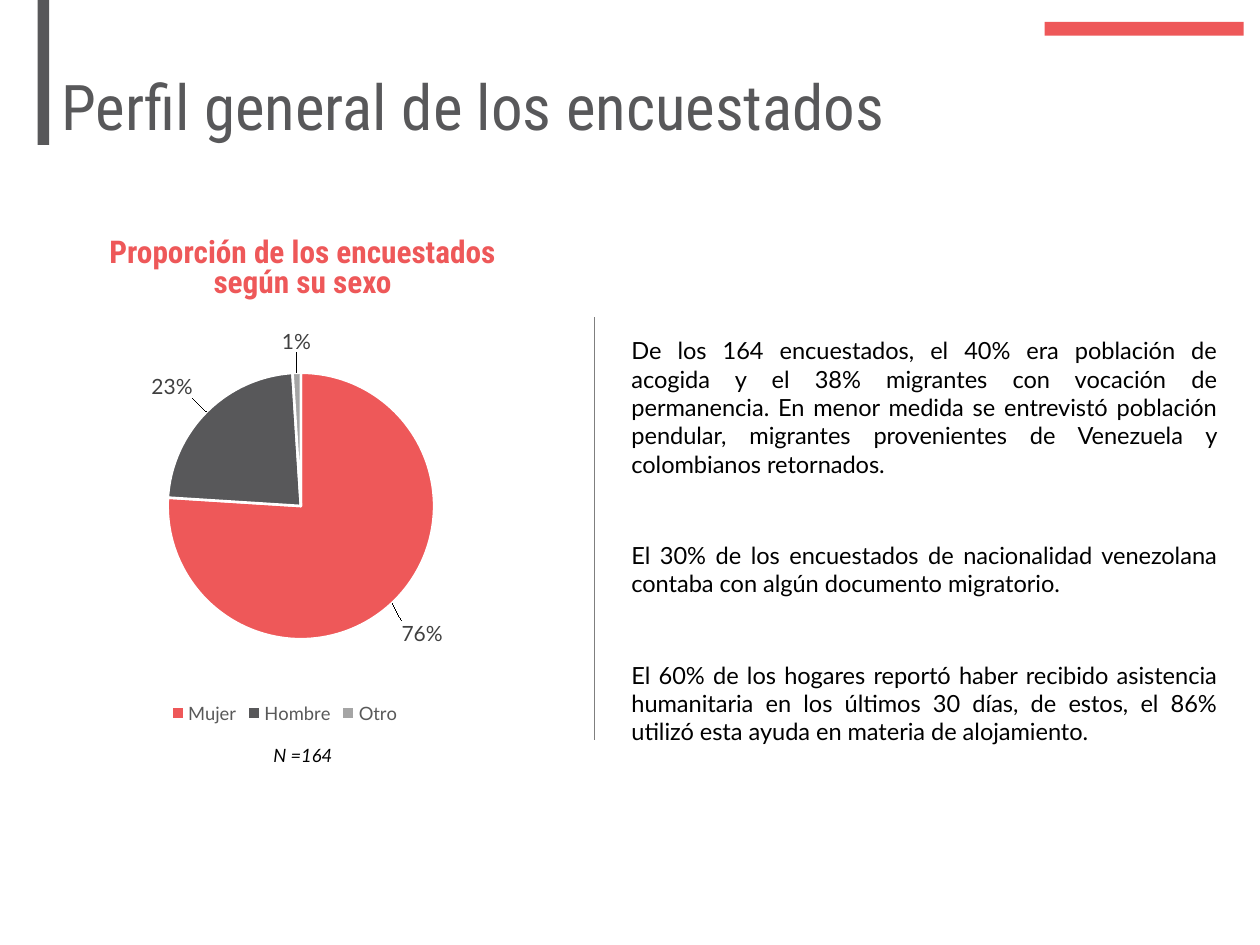
import pptx
import pptx.util
import pptx.chart.data
import pptx.dml.color
import pptx.enum.chart
import pptx.enum.shapes
import pptx.enum.text
import pptx.oxml
import pptx.oxml.ns

Cm, Pt = pptx.util.Cm, pptx.util.Pt
ALIGN = pptx.enum.text.PP_ALIGN
ANCHOR = pptx.enum.text.MSO_ANCHOR
COLOURS = {"red": "EE5859", "dark": "58585A", "grey": "A5A5A5", "rule": "7F7F7F",
           "legend": "595959", "label": "404040", "black": "000000", "white": "FFFFFF"}


def colour(name):
    return pptx.dml.color.RGBColor.from_string(COLOURS[name])


def style(font, tint, **values):
    for key, value in values.items():
        setattr(font, key, value)
    font.color.rgb = colour(tint)


deck = pptx.Presentation()
deck.slide_width, deck.slide_height = Cm(25.4), Cm(19.05)
page = deck.slides.add_slide(deck.slide_layouts[6])

for tint, left, top, width, height in [("red", 21.06, 0.44, 4.01, 0.28),
                                       ("dark", 0.76, 0, 0.23, 2.92)]:
    bar = page.shapes.add_shape(pptx.enum.shapes.MSO_SHAPE.RECTANGLE,
                                Cm(left), Cm(top), Cm(width), Cm(height))
    bar.shadow.inherit = False
    bar.fill.solid()
    bar.fill.fore_color.rgb = colour(tint)
    bar.line.fill.background()

data = pptx.chart.data.CategoryChartData(number_format='0"%"')
data.categories = ["Mujer", "Hombre", "Otro"]
data.add_series("Sexo", [76, 23, 1])
chart = page.shapes.add_chart(pptx.enum.chart.XL_CHART_TYPE.PIE,
                              Cm(1.32), Cm(6.4), Cm(8.84), Cm(8.31), data).chart
chart.has_title = False
style(chart.font, "black", name="Lato", size=Pt(10))
chart.has_legend = True
chart.legend.position = pptx.enum.chart.XL_LEGEND_POSITION.BOTTOM
chart.legend.include_in_layout = False
style(chart.legend.font, "legend", name="Lato", size=Pt(10.5))


def layout(target, **values):
    parts = "".join(f'<c:{key} val="{value}"/>' for key, value in values.items())
    return pptx.oxml.parse_xml(f'<c:layout {pptx.oxml.ns.nsdecls("c")}>'
                               f'<c:manualLayout>{target}{parts}</c:manualLayout></c:layout>')


area = chart.plots[0]._element.getparent()
for old in area.findall(pptx.oxml.ns.qn("c:layout")):
    area.remove(old)
area.insert(0, layout('<c:layoutTarget val="inner"/>', xMode="edge", yMode="edge",
                      x=0.233, y=0.114, w=0.608, h=0.687))

series = chart.plots[0].series[0]
outside = pptx.enum.chart.XL_LABEL_POSITION.OUTSIDE_END
labels = series.data_labels
labels.show_value = True
labels.position = outside
style(labels.font, "label", name="Lato", size=Pt(12))
for index, (tint, x, y) in enumerate([("red", 0.01, 0.03), ("dark", -0.02, -0.02),
                                      ("grey", 0, -0.03)]):
    point = series.points[index]
    point.format.fill.solid()
    point.format.fill.fore_color.rgb = colour(tint)
    point.format.line.color.rgb = colour("white")
    point.format.line.width = Pt(1.5)
    point.data_label.position = outside
    style(point.data_label.font, "label", name="Lato", size=Pt(12))
    labels._element.findall(pptx.oxml.ns.qn("c:dLbl"))[index].insert(1, layout("", x=x, y=y))

body = ["De los 164 encuestados, el 40% era población de acogida y el 38% migrantes con "
        "vocación de permanencia. En menor medida se entrevistó población pendular, "
        "migrantes provenientes de Venezuela y colombianos retornados.",
        "El 30% de los encuestados de nacionalidad venezolana contaba con algún "
        "documento migratorio.",
        "El 60% de los hogares reportó haber recibido asistencia humanitaria en los "
        "últimos 30 días, de estos, el 86% utilizó esta ayuda en materia de alojamiento."]
texts = [
    ((0.99, 1.37, 20.42, 1.7), 0.25, ANCHOR.MIDDLE, ["Perfil general de los encuestados"],
     {"alignment": ALIGN.LEFT, "line_spacing": 0.9}, "dark",
     {"name": "Roboto Condensed", "size": Pt(36)}),
    ((12.55, 6.68, 12.17, 8.03), 0.18, ANCHOR.TOP, body,
     {"alignment": ALIGN.JUSTIFY}, "black", {"name": "Lato", "size": Pt(13.5)}),
    ((1.68, 4.72, 8.84, 1.47), 0.18, ANCHOR.TOP,
     ["Proporción de los encuestados según su sexo"],
     {"alignment": ALIGN.CENTER, "line_spacing": 0.8}, "red",
     {"name": "Roboto Condensed", "size": Pt(17.9), "bold": True}),
    ((2.03, 14.91, 8.15, 1.19), 0.18, ANCHOR.TOP, ["N =164"],
     {"alignment": ALIGN.CENTER}, "black",
     {"name": "Lato", "size": Pt(10.5), "italic": True}),
]
for place, inset, anchor, lines, para_format, tint, font_format in texts:
    frame = page.shapes.add_textbox(*map(Cm, place)).text_frame
    box_format = {"word_wrap": True, "vertical_anchor": anchor,
                  "margin_left": Cm(inset), "margin_right": Cm(inset),
                  "margin_top": Cm(0.1), "margin_bottom": Cm(0.1)}
    for key, value in box_format.items():
        setattr(frame, key, value)
    for number, line in enumerate(lines):
        para = frame.add_paragraph() if number else frame.paragraphs[0]
        para.space_before = Pt(36 if number else 0)
        for key, value in para_format.items():
            setattr(para, key, value)
        span = para.add_run()
        span.text = line
        style(span.font, tint, **font_format)

divider = page.shapes.add_connector(pptx.enum.shapes.MSO_CONNECTOR.STRAIGHT,
                                    Cm(11.99), Cm(6.4), Cm(11.99), Cm(14.91))
divider.line.color.rgb = colour("rule")
divider.line.width = Pt(0.5)
divider._element.spPr.append(pptx.oxml.parse_xml(
    f'<a:effectLst {pptx.oxml.ns.nsdecls("a")}/>'))

deck.save("out.pptx")
